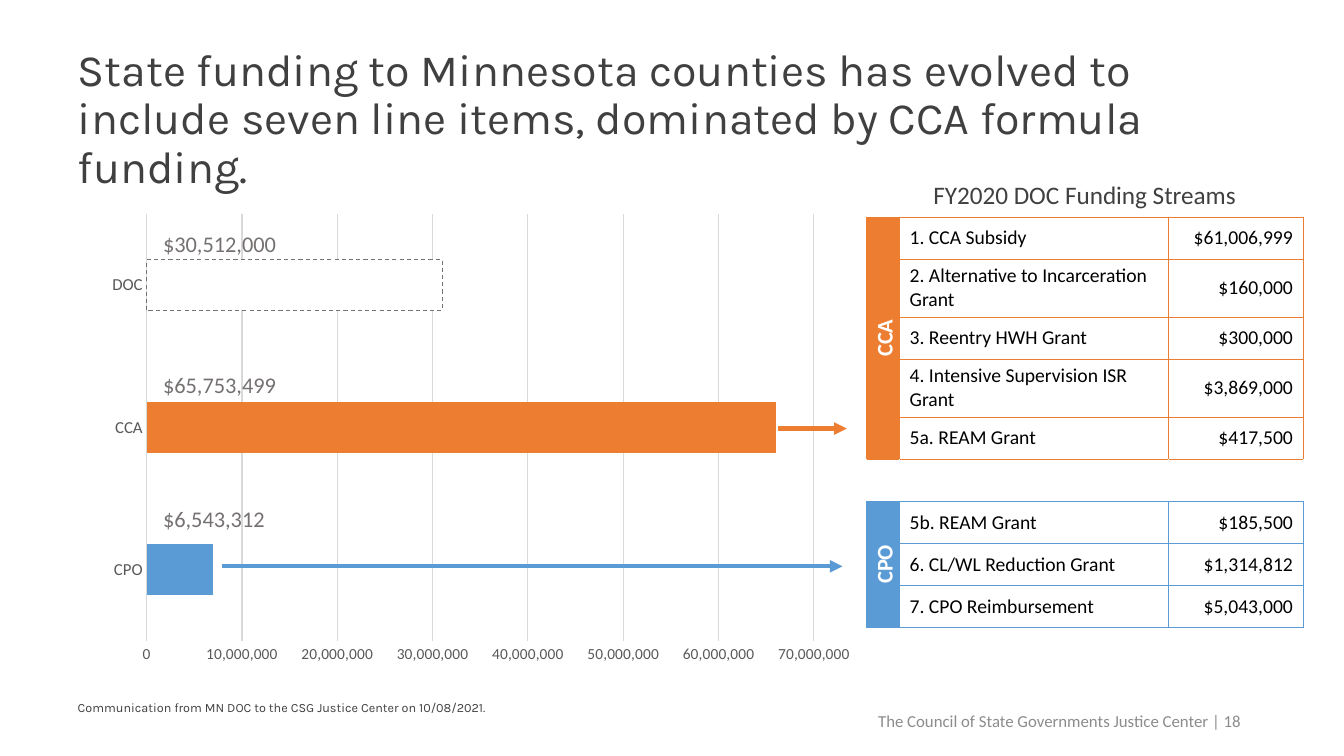
from lxml.etree import SubElement
from pptx import Presentation
from pptx.chart.data import CategoryChartData
from pptx.dml.color import RGBColor
from pptx.enum.chart import XL_CHART_TYPE as CT, XL_TICK_MARK as TICK
from pptx.enum.dml import MSO_LINE
from pptx.enum.shapes import MSO_CONNECTOR as CONN
from pptx.enum.text import MSO_ANCHOR as ANCHOR, PP_ALIGN as ALIGN
from pptx.oxml import parse_xml
from pptx.oxml.ns import nsdecls, qn
from pptx.util import Cm, Pt

ORANGE, BLUE, WHITE = "ED7D31", "5B9BD5", "FFFFFF"
DARK, GREY, MUTED, PALE = "404040", "595959", "767171", "D9D9D9"

STREAMS = [
    ("CCA", ORANGE, [
        ("1. CCA Subsidy", "$61,006,999"),
        ("2. Alternative to Incarceration Grant", "$160,000"),
        ("3. Reentry HWH Grant", "$300,000"),
        ("4. Intensive Supervision ISR Grant", "$3,869,000"),
        ("5a. REAM Grant", "$417,500"),
    ]),
    ("CPO", BLUE, [
        ("5b. REAM Grant", "$185,500"),
        ("6. CL/WL Reduction Grant", "$1,314,812"),
        ("7. CPO Reimbursement", "$5,043,000"),
    ]),
]
TOTALS = [
    ("CPO", 7000000, "$6,543,312", BLUE),
    ("CCA", 66000000, "$65,753,499", ORANGE),
    ("DOC", 31000000, "$30,512,000", WHITE),
]


def rgb(value):
    return RGBColor.from_string(value)


def style(font, size, color, name="Calibri", bold=False):
    font.size, font.name, font.bold = Pt(size), name, bold
    font.color.rgb = rgb(color)


def add_text(s, box, text, size, color, name="Calibri", align=ALIGN.LEFT,
             anchor=ANCHOR.MIDDLE, spacing=None):
    tf = s.shapes.add_textbox(*map(Cm, box)).text_frame
    tf.word_wrap = True
    tf.vertical_anchor = anchor
    p = tf.paragraphs[0]
    p.text = text
    p.alignment, p.line_spacing = align, spacing
    style(p.runs[0].font, size, color, name)


def add_arrow(s, x1, x2, y, color):
    c = s.shapes.add_connector(CONN.STRAIGHT, Cm(x1), Cm(y), Cm(x2), Cm(y))
    c.line.color.rgb = rgb(color)
    c.line.width = Pt(3)
    SubElement(c.line._get_or_add_ln(), qn("a:tailEnd"), type="triangle")
    SubElement(c._element.spPr, qn("a:effectLst"))


def set_plot_area(chart, x, y, w, h):
    area = chart._chartSpace.chart.plotArea
    for old in area.findall(qn("c:layout")):
        area.remove(old)
    sizes = "".join(f'<c:{k} val="{v}"/>' for k, v in zip("xywh", (x, y, w, h)))
    area.insert(0, parse_xml(
        f'<c:layout {nsdecls("c")}><c:manualLayout><c:layoutTarget val="inner"/>'
        f'<c:xMode val="edge"/><c:yMode val="edge"/>{sizes}'
        '</c:manualLayout></c:layout>'))


def add_totals_chart(s, box):
    x, y, w, h = box
    data = CategoryChartData()
    data.categories = [name for name, *_ in TOTALS]
    data.add_series("Series 1", [total for _, total, *_ in TOTALS])
    chart = s.shapes.add_chart(CT.BAR_CLUSTERED, *map(Cm, box), data).chart
    chart.has_legend = chart.has_title = False
    style(chart.font, 10, "000000")
    set_plot_area(chart, 0.064, 0.018, 0.87, 0.911)

    cat, val = chart.category_axis, chart.value_axis
    for axis, size in ((cat, 12), (val, 11)):
        axis.major_tick_mark = axis.minor_tick_mark = TICK.NONE
        style(axis.tick_labels.font, size, GREY)
    cat.format.line.color.rgb = rgb(PALE)
    cat.format.line.width = Pt(0.75)
    val.format.line.fill.background()
    val.minimum_scale, val.maximum_scale, val.major_unit = 0, 70000000, 10000000
    val.tick_labels.number_format = "#,##0"
    val.tick_labels.number_format_is_linked = False
    val.major_gridlines.format.line.color.rgb = rgb(PALE)
    val.major_gridlines.format.line.width = Pt(0.75)

    plot = chart.plots[0]
    plot.gap_width, plot.vary_by_categories = 182, False
    bars = plot.series[0]
    bars.format.fill.solid()
    bars.format.fill.fore_color.rgb = rgb("4472C4")
    for i, (*_, color) in enumerate(TOTALS):
        fill = bars.points[i].format.fill
        fill.solid()
        fill.fore_color.rgb = rgb(color)
    outline = bars.points[2].format.line
    outline.color.rgb = rgb(MUTED)
    outline.width = Pt(0.75)
    outline.dash_style = MSO_LINE.DASH

    for (_, _, label, _), dy in zip(TOTALS, (7.45, 4.09, 0.54)):
        add_text(s, (x + 1.4, y + dy, 4.4, 0.86), label, 16, MUTED)
    add_arrow(s, x + 17.15, x + 18.88, y + 5.62, ORANGE)
    add_arrow(s, x + 3.13, x + 18.77, y + 9.09, BLUE)


def set_borders(cell, left, right, top, bottom):
    tc_pr = cell._tc.get_or_add_tcPr()
    for i, (side, color) in enumerate(zip("LRTB", (left, right, top, bottom))):
        width = 12700 if color == WHITE else 3175
        tc_pr.insert(i, parse_xml(
            f'<a:ln{side} {nsdecls("a")} w="{width}"><a:solidFill>'
            f'<a:srgbClr val="{color}"/></a:solidFill></a:ln{side}>'))


def set_cell(cell, text, size, color, align, bold=False, anchor=ANCHOR.MIDDLE):
    cell.vertical_anchor = anchor
    p = cell.text_frame.paragraphs[0]
    p.text = text
    p.alignment = align
    style(p.runs[0].font, size, color, bold=bold)


def add_streams_table(s, box):
    table = s.shapes.add_table(10, 3, *map(Cm, box)).table
    table.first_row = table.horz_banding = False
    for col, width in zip(table.columns, (0.84, 6.78, 3.39)):
        col.width = Cm(width)
    for i, row in enumerate(table.rows):
        row.height = Cm(1.46 if i in (2, 4) else 1.06)
    for cell in table.iter_cells():
        cell.fill.solid()
        cell.fill.fore_color.rgb = rgb(WHITE)

    table.cell(0, 0).merge(table.cell(0, 2))
    set_cell(table.cell(0, 0), "FY2020 DOC Funding Streams", 18, DARK,
             ALIGN.CENTER, anchor=ANCHOR.TOP)
    for c in range(3):
        set_borders(table.cell(0, c), WHITE, WHITE, WHITE, ORANGE)
        set_borders(table.cell(6, c), WHITE, WHITE, ORANGE, BLUE)

    first = 1
    for name, color, grants in STREAMS:
        head = table.cell(first, 0)
        head.merge(table.cell(first + len(grants) - 1, 0))
        head.fill.fore_color.rgb = rgb(color)
        set_cell(head, name, 16, WHITE, ALIGN.CENTER, bold=True)
        head._tc.get_or_add_tcPr().set("vert", "vert270")
        for r, (grant, amount) in enumerate(grants, first):
            set_cell(table.cell(r, 1), grant, 14, "000000", ALIGN.LEFT)
            set_cell(table.cell(r, 2), amount, 14, "000000", ALIGN.RIGHT)
            for c in range(3):
                set_borders(table.cell(r, c), color, color, color, color)
        first += len(grants) + 1


def main():
    prs = Presentation()
    prs.slide_width, prs.slide_height = Cm(33.87), Cm(19.05)
    s = prs.slides.add_slide(prs.slide_layouts[6])
    add_text(s, (20.33, 17.65, 11.2, 1.02),
             "The Council of State Governments Justice Center | 18",
             12, "8C8C8C", align=ALIGN.RIGHT)
    add_text(s, (1.71, 17.55, 18.62, 0.61),
             "Communication from MN DOC to the CSG Justice Center on 10/08/2021.",
             9, DARK, "Karla", anchor=ANCHOR.BOTTOM, spacing=0.9)
    add_streams_table(s, (21.83, 4.41, 11.01, 11.4))
    add_totals_chart(s, (2.46, 5.18, 19.33, 11.81))
    add_text(s, (1.71, 1.28, 30.48, 3.5),
             "State funding to Minnesota counties has evolved to include seven "
             "line items, dominated by CCA formula funding.",
             32, DARK, "Karla", spacing=0.9)
    prs.save("out.pptx")


if __name__ == "__main__":
    main()
